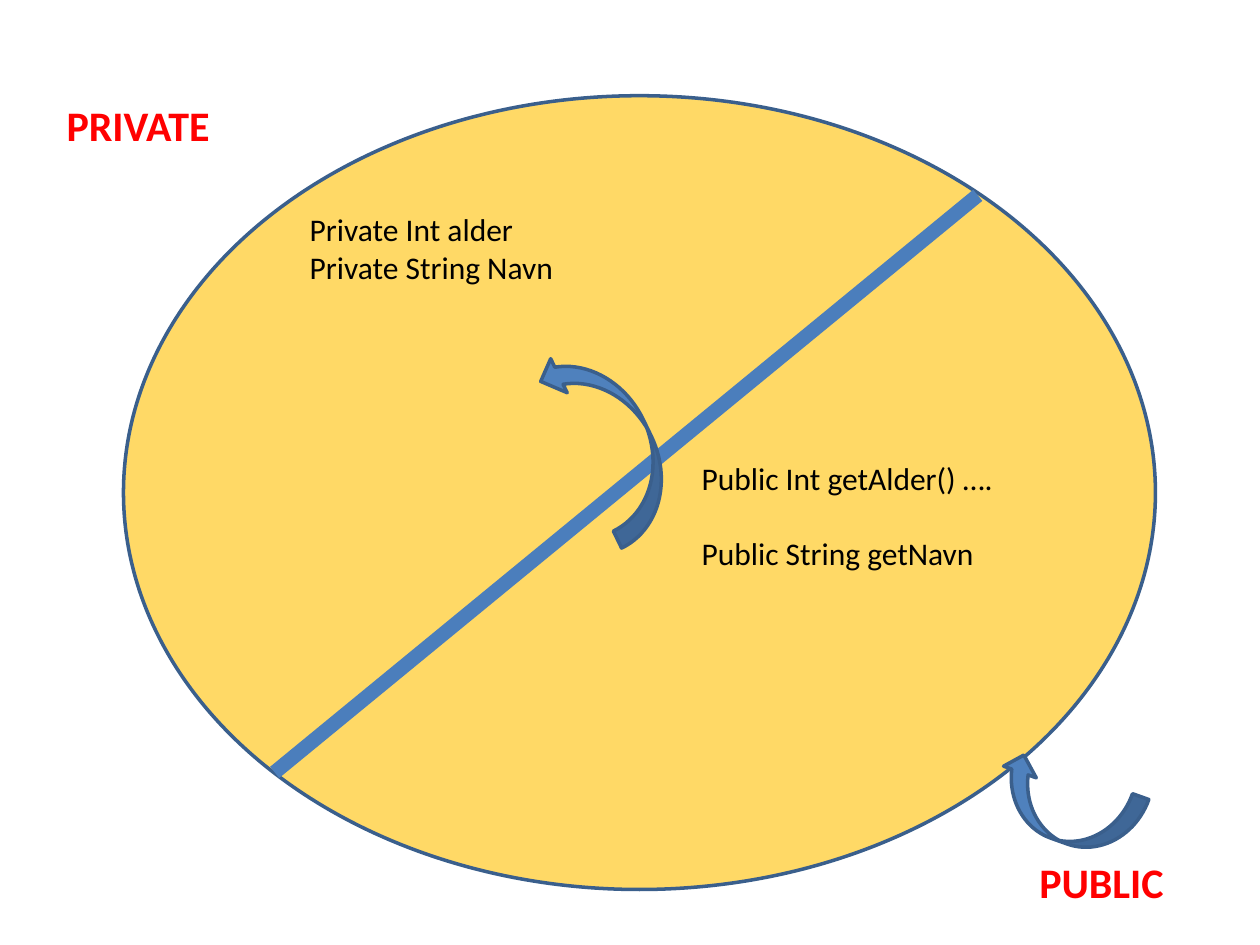
from lxml.etree import SubElement
from pptx import Presentation
from pptx.dml.color import RGBColor
from pptx.enum.shapes import MSO_CONNECTOR, MSO_SHAPE
from pptx.oxml.ns import qn
from pptx.util import Inches, Pt

RED, BLACK, BLUE, OUTLINE = "FF0000", "000000", "4F81BD", "3A5F8C"


def color(value):
    return RGBColor.from_string(value)


def set_values(target, values):
    for name, value in values.items():
        setattr(target, name, value)


class EncapsulationSlide:
    """Hold the style and the page, and draw each kind of element."""

    font_name = "Calibri"

    def __init__(self, page):
        self.page = page

    def set_line(self, line, value, width):
        line.color.rgb = color(value)
        line.width = Pt(width)

    def shape(self, kind, place, fill, opacity=100, rotation=0, flipped=False):
        shape = self.page.shapes.add_shape(kind, *map(Inches, place))
        shape.shadow.inherit = False
        shape.rotation = rotation
        shape.fill.solid()
        shape.fill.fore_color.rgb = color(fill)
        self.set_line(shape.line, OUTLINE, 2)
        properties = shape._element.spPr
        if opacity < 100:
            fill_color = properties.find(qn("a:solidFill"))[0]
            SubElement(fill_color, qn("a:alpha"), val=str(opacity * 1000))
        if flipped:
            for name in ("flipH", "flipV"):
                properties.find(qn("a:xfrm")).set(name, "1")

    def divider(self, start, end, value, width):
        line = self.page.shapes.add_connector(
            MSO_CONNECTOR.STRAIGHT, *map(Inches, start + end))
        self.set_line(line.line, value, width)
        SubElement(line._element.spPr, qn("a:effectLst"))

    def text(self, place, lines, size=18, value=BLACK, bold=False, wrap=True, gap=0):
        box = self.page.shapes.add_textbox(*map(Inches, place))
        frame = box.text_frame
        frame.word_wrap = wrap
        for index, wording in enumerate(lines):
            para = frame.add_paragraph() if index else frame.paragraphs[0]
            if index and gap:
                para.space_before = Pt(gap)
            span = para.add_run()
            span.text = wording
            set_values(span.font, {"name": self.font_name, "size": Pt(size), "bold": bold})
            span.font.color.rgb = color(value)

    def label(self, place, wording):
        self.text(place, [wording], size=24, value=RED, bold=True, wrap=False)


def main():
    deck = Presentation()
    set_values(deck, {"slide_width": Inches(10), "slide_height": Inches(7.5)})
    slide = EncapsulationSlide(deck.slides.add_slide(deck.slide_layouts[6]))

    slide.shape(MSO_SHAPE.OVAL, (0.98, 0.76, 8.19, 6.3), "FFC000", opacity=60)
    slide.divider((2.18, 6.13), (7.76, 1.55), "4B7EBC", 8.25)
    slide.text((2.36, 1.62, 2.28, 1.01), ["Private Int alder", "Private String Navn"])
    slide.text((5.47, 3.59, 2.91, 1.31),
               ["Public Int getAlder() ….", "Public String getNavn"], gap=21.6)
    slide.label((0.43, 0.74, 1.35, 0.5), "PRIVATE")
    slide.label((8.15, 6.75, 1.2, 0.5), "PUBLIC")
    slide.shape(MSO_SHAPE.CURVED_RIGHT_ARROW, (4.55, 2.68, 0.6, 1.62), BLUE,
                rotation=334.1, flipped=True)
    slide.shape(MSO_SHAPE.CURVED_LEFT_ARROW, (8.19, 5.81, 0.55, 1.19), BLUE,
                rotation=109.6)

    deck.save("out.pptx")


if __name__ == "__main__":
    main()
